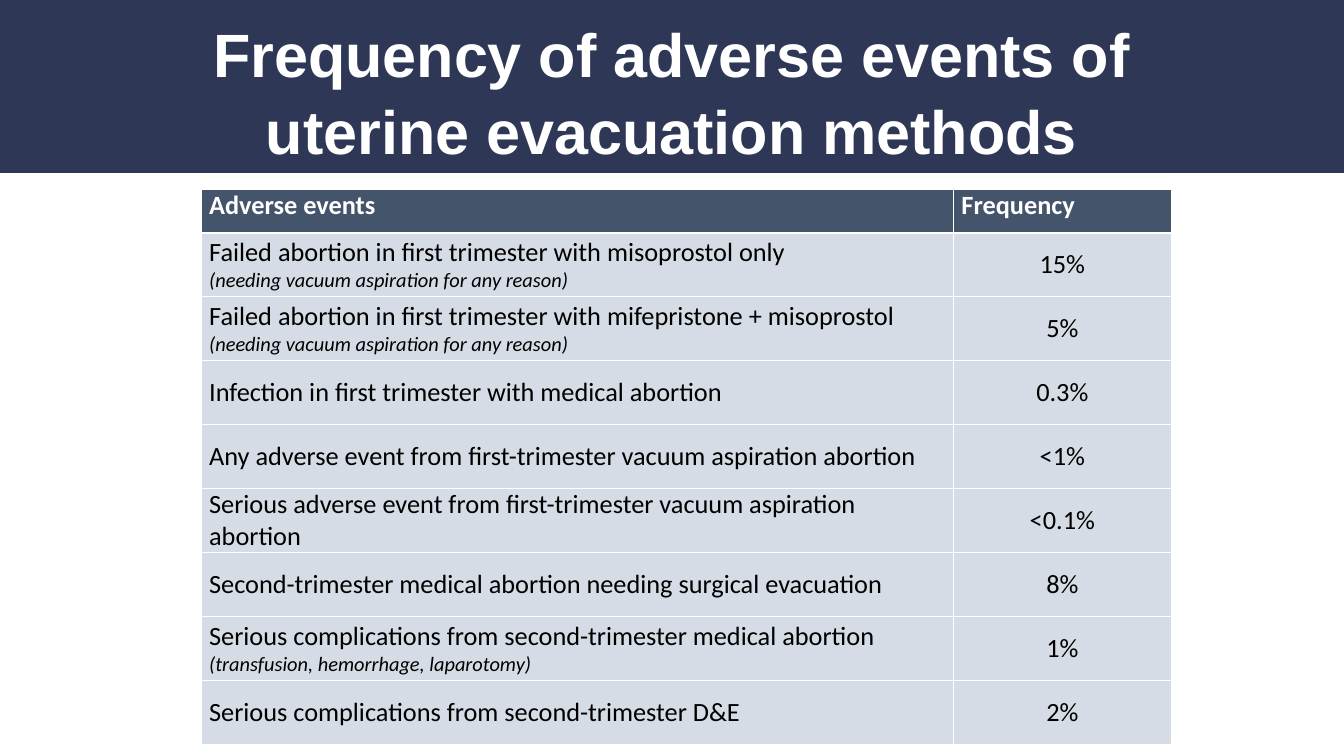
from lxml import etree
from pptx import Presentation
from pptx.dml.color import RGBColor
from pptx.enum.shapes import MSO_SHAPE as Shape
from pptx.enum.text import MSO_ANCHOR as Anchor, PP_ALIGN as Align
from pptx.oxml.ns import qn
from pptx.util import Pt

WHITE = RGBColor(0xFF, 0xFF, 0xFF)
BLACK = RGBColor(0, 0, 0)
NAVY = RGBColor(0x2E, 0x38, 0x56)
SLATE = RGBColor(0x44, 0x54, 0x6A)
PALE = RGBColor(0xD6, 0xDC, 0xE5)

WIDE, HIGH = 1583.3, 890.6
TITLE = "Frequency of adverse events of uterine evacuation methods"
HEADS = ("Adverse events", "Frequency")
NEED = "(needing vacuum aspiration for any reason)"
EVENTS = [
    ("Failed abortion in first trimester with misoprostol only", NEED, "15%"),
    ("Failed abortion in first trimester with mifepristone + misoprostol", NEED, "5%"),
    ("Infection in first trimester with medical abortion", "", "0.3%"),
    ("Any adverse event from first-trimester vacuum aspiration abortion", "", "<1%"),
    ("Serious adverse event from first-trimester vacuum aspiration abortion", "", "<0.1%"),
    ("Second-trimester medical abortion needing surgical evacuation", "", "8%"),
    ("Serious complications from second-trimester medical abortion",
     "(transfusion, hemorrhage, laparotomy)", "1%"),
    ("Serious complications from second-trimester D&E", "", "2%"),
]


def write(para, text, font="Calibri", size=31, color=BLACK, bold=False,
          slant=False, align=Align.LEFT, space=1.0):
    """Put one formatted run into a paragraph."""
    para.alignment = align
    para.line_spacing = space
    run = para.add_run()
    run.text = text
    face = run.font
    face.name, face.size = font, Pt(size)
    face.bold, face.italic = bold, slant
    face.color.rgb = color


class Deck:
    """Hold the table style and the current slide."""

    pad, rule, thick = 9.4, 1, 3

    def __init__(self, slide):
        """Keep the slide to draw on."""
        self.shapes = slide.shapes

    def band(self, x, y, w, h, color):
        """Draw a plain filled bar."""
        bar = self.shapes.add_shape(Shape.RECTANGLE, Pt(x), Pt(y), Pt(w), Pt(h))
        bar.shadow.inherit = False
        bar.fill.solid()
        bar.fill.fore_color.rgb = color
        bar.line.fill.background()

    def title(self, x, y, w, h, text):
        """Add the centred heading."""
        frame = self.shapes.add_textbox(Pt(x), Pt(y), Pt(w), Pt(h)).text_frame
        frame.word_wrap = True
        frame.vertical_anchor = Anchor.MIDDLE
        frame.margin_left = frame.margin_right = frame.margin_bottom = 0
        frame.margin_top = Pt(9)
        write(frame.paragraphs[0], text, font="Arial", size=72, color=WHITE,
              bold=True, align=Align.CENTER, space=1.04)

    def edge(self, cell, base):
        """Give a cell white borders."""
        props = cell._tc.get_or_add_tcPr()
        for i, side in enumerate(("lnL", "lnR", "lnT", "lnB")):
            width = base if side == "lnB" else self.rule
            line = etree.Element(qn("a:" + side), w=str(Pt(width)))
            fill = etree.SubElement(line, qn("a:solidFill"))
            etree.SubElement(fill, qn("a:srgbClr"), val=str(WHITE))
            props.insert(i, line)

    def cell(self, cell, lines, fill, anchor=Anchor.MIDDLE, base=1):
        """Fill a cell with formatted lines of text."""
        cell.fill.solid()
        cell.fill.fore_color.rgb = fill
        cell.vertical_anchor = anchor
        cell.margin_left = cell.margin_right = Pt(self.pad)
        cell.margin_top = cell.margin_bottom = 0
        frame = cell.text_frame
        for i, (text, look) in enumerate(lines):
            para = frame.add_paragraph() if i else frame.paragraphs[0]
            write(para, text, **look)
        self.edge(cell, base)

    def table(self, x, y, cols, top, row, heads, events):
        """Add the table of events and their frequency."""
        count = len(events)
        grid = self.shapes.add_table(count + 1, len(cols), Pt(x), Pt(y),
                                     Pt(sum(cols)), Pt(top + count * row)).table
        for col, width in zip(grid.columns, cols):
            col.width = Pt(width)
        for i, line in enumerate(grid.rows):
            line.height = Pt(row if i else top)
        for i, head in enumerate(heads):
            self.cell(grid.cell(0, i), [(head, dict(color=WHITE, bold=True))],
                      SLATE, Anchor.TOP, self.thick)
        for i, (event, note, rate) in enumerate(events, 1):
            lines = [(event, {})]
            if note:
                lines.append((note, dict(size=24, slant=True)))
            self.cell(grid.cell(i, 0), lines, PALE)
            self.cell(grid.cell(i, 1), [(rate, dict(align=Align.CENTER))], PALE)


def main():
    """Build and save the slide."""
    show = Presentation()
    show.slide_width, show.slide_height = Pt(WIDE), Pt(HIGH)
    deck = Deck(show.slides.add_slide(show.slide_layouts[6]))
    deck.band(0, 0, WIDE, 203.8, NAVY)
    deck.title(215.3, 14.4, 1152, 174.2, TITLE)
    deck.table(237, 223.2, (886.3, 256.3), 51.1, 75.4, HEADS, EVENTS)
    show.save("out.pptx")


if __name__ == "__main__":
    main()
